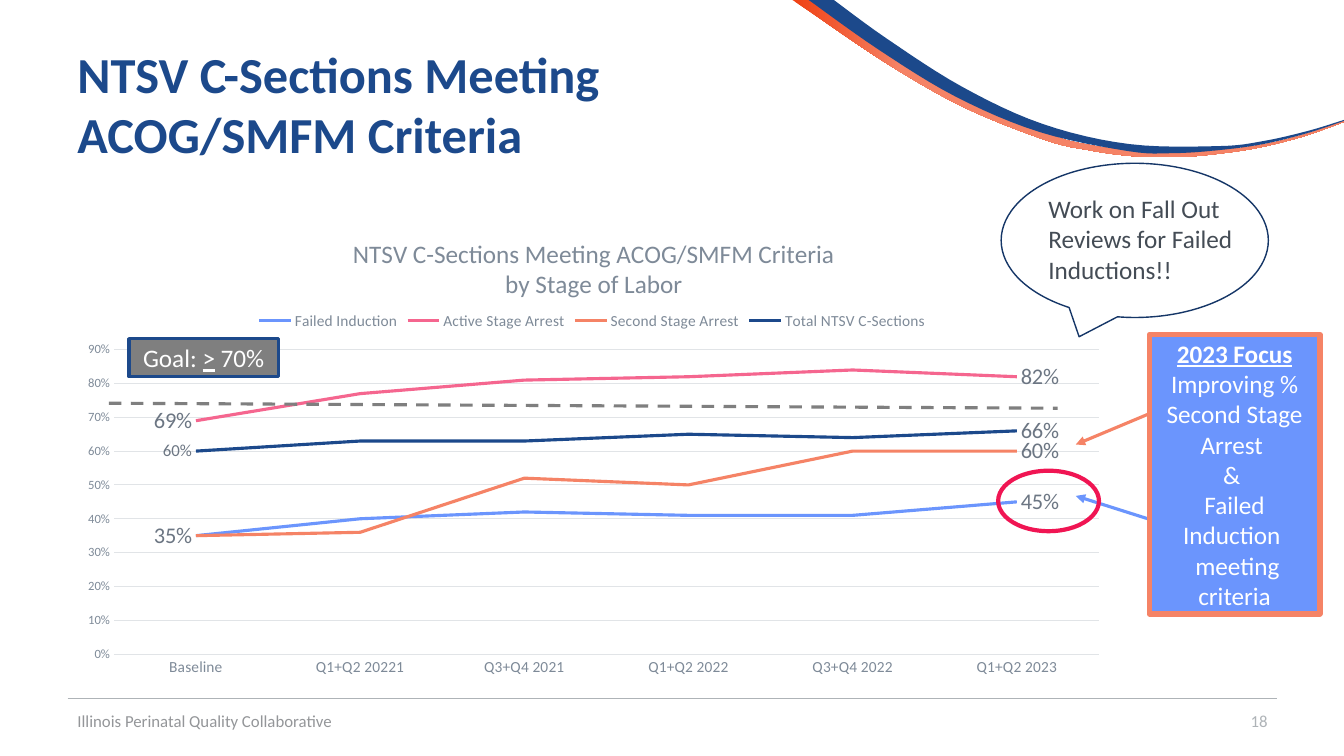
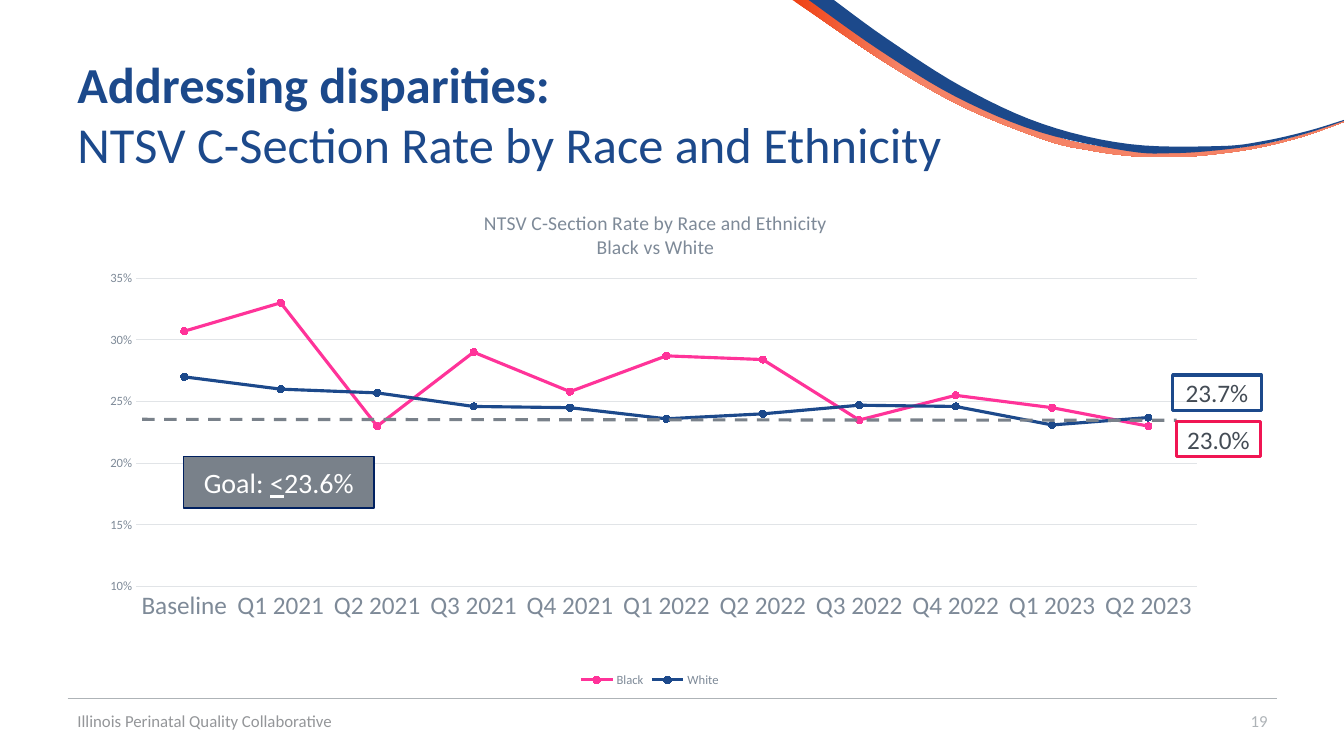
from lxml import etree
from pptx import Presentation
from pptx.chart.data import CategoryChartData
from pptx.dml.color import RGBColor
from pptx.enum.chart import XL_CHART_TYPE, XL_LABEL_POSITION, XL_LEGEND_POSITION, XL_MARKER_STYLE, XL_TICK_MARK
from pptx.enum.dml import MSO_LINE
from pptx.enum.shapes import MSO_CONNECTOR, MSO_SHAPE
from pptx.enum.text import MSO_ANCHOR, PP_ALIGN
from pptx.oxml.ns import qn
from pptx.util import Inches, Pt

FONT = "Calibri"
COLORS = {
    "navy": "1C498B", "deep_navy": "153667", "dark_navy": "002060", "red_orange": "EF4114",
    "coral": "F58366", "blue": "6B95FD", "pink": "F5668F", "hot_pink": "FF3399",
    "crimson": "F01553", "text": "444C55", "chart_text": "7E8A98", "label": "6C7683",
    "grid": "E1E4E7", "rule": "AEB3B7", "footer": "949699", "gray": "7F7F7F",
    "slate": "79818A", "white": "FFFFFF",
}
FOOTER = "Illinois Perinatal Quality Collaborative"

CORAL_TOP = [(7.86, 0), (8.05, 0), (8.82, 0.54), (9.58, 0.99), (10.39, 1.33), (10.81, 1.44),
             (11.25, 1.5), (11.68, 1.52), (12.12, 1.49), (12.56, 1.43), (12.99, 1.32), (13.33, 1.2)]
CORAL_BOTTOM = [(13.33, 1.21), (12.94, 1.35), (12.51, 1.46), (12.13, 1.52), (11.69, 1.56), (11.24, 1.55),
                (10.8, 1.49), (10.37, 1.39), (9.55, 1.06), (8.78, 0.62), (8.04, 0.12), (7.86, 0)]
NAVY_TOP = [(8.27, 0), (8.79, 0.38), (9.54, 0.86), (10.34, 1.23), (11.2, 1.43), (12.09, 1.45),
            (12.53, 1.4), (12.97, 1.3), (13.33, 1.19)]
NAVY_BOTTOM = [(13.33, 1.2), (12.97, 1.32), (12.53, 1.43), (12.09, 1.49), (11.64, 1.52), (11.19, 1.5),
               (10.31, 1.31), (9.48, 0.96), (8.71, 0.49), (8.02, 0)]

STAGE_CHART = {
    "box": (0.67, 2.12, 10.44, 4.69), "type": XL_CHART_TYPE.LINE,
    "title": ["NTSV C-Sections Meeting ACOG/SMFM Criteria", "by Stage of Labor"],
    "title_size": 18, "title_at": (3.47, 2.32),
    "plot": (1.13, 3.47, 9.77, 3.02), "scale": (0, 0.9, 0.1), "category_size": 11,
    "legend": XL_LEGEND_POSITION.TOP, "legend_size": 11, "legend_at": (2.52, 3.05),
    "categories": ["Baseline", "Q1+Q2 20221", "Q3+Q4 2021", "Q1+Q2 2022", "Q3+Q4 2022", "Q1+Q2 2023"],
    "series": [
        ("Failed Induction", "blue", [0.35, 0.4, 0.42, 0.41, 0.41, 0.45], {5: 16}),
        ("Active Stage Arrest", "pink", [0.69, 0.77, 0.81, 0.82, 0.84, 0.82], {0: 16, 5: 16}),
        ("Second Stage Arrest", "coral", [0.35, 0.36, 0.52, 0.5, 0.6, 0.6], {0: 16, 5: 16}),
        ("Total NTSV C-Sections", "navy", [0.6, 0.63, 0.63, 0.65, 0.64, 0.66], {0: 12, 5: 16}),
    ],
}
RACE_CHART = {
    "box": (0.87, 1.85, 11.21, 5.02), "type": XL_CHART_TYPE.LINE_MARKERS,
    "title": ["NTSV C-Section Rate by Race and Ethnicity", "Black vs White"],
    "title_size": 14, "title_at": (4.77, 2.05),
    "plot": (1.35, 2.76, 10.52, 3.06), "scale": (0.1, 0.35, 0.05), "category_size": 18,
    "legend": XL_LEGEND_POSITION.BOTTOM, "legend_size": 9, "legend_at": (5.72, 6.65),
    "categories": ["Baseline"] + [f"Q{quarter} {year}" for year, last in ((2021, 4), (2022, 4), (2023, 2))
                                  for quarter in range(1, last + 1)],
    "series": [
        ("Black", "hot_pink", [0.307, 0.33, 0.23, 0.29, 0.258, 0.287, 0.284, 0.235, 0.255, 0.245, 0.23], {}),
        ("White", "navy", [0.27, 0.26, 0.257, 0.246, 0.245, 0.236, 0.24, 0.247, 0.246, 0.231, 0.237], {}),
    ],
}
STAGE_TITLE = [[("NTSV C-Sections Meeting", "b")], [("ACOG/SMFM Criteria", "b")]]
RACE_TITLE = [[("Addressing disparities:", "b")], [("NTSV C-Section Rate by Race and Ethnicity", "")]]
STAGE_GOAL = [[("Goal: ", ""), (">", "u"), (" 70%", "")]]
RACE_GOAL = [[("Goal: ", ""), ("<", "u"), ("23.6%", "")]]
FOCUS = [
    [("2023 Focus ", "bu"), ("Improving % Second Stage Arrest ", "")],
    [("& ", "")],
    [("Failed Induction ", "")],
    [(" meeting criteria", "")],
]
CALLOUT = [[("Work on Fall Out Reviews for Failed Inductions!!", "")]]
ARROWS = [("blue", (11.49, 5.18), (10.67, 4.92)), ("coral", (11.41, 4.1), (10.67, 4.41))]
RATES = [("23.0%", "crimson", (11.67, 4.18, 0.83, 0.35)), ("23.7%", "navy", (11.63, 3.72, 0.88, 0.35))]


def rgb(name):
    return RGBColor.from_string(COLORS[name])


def style_font(font, size, color):
    font.name = FONT
    font.size = Pt(size)
    font.color.rgb = rgb(color)


def write(text_frame, paragraphs, size, color, align=PP_ALIGN.LEFT, anchor=MSO_ANCHOR.MIDDLE):
    text_frame.word_wrap = True
    text_frame.vertical_anchor = anchor
    for index, runs in enumerate(paragraphs):
        paragraph = text_frame.add_paragraph() if index else text_frame.paragraphs[0]
        paragraph.alignment = align
        for text, marks in runs:
            run = paragraph.add_run()
            run.text = text
            style_font(run.font, size, color)
            run.font.bold = "b" in marks
            run.font.underline = "u" in marks


def add_text(slide, box, paragraphs, size, color, **options):
    textbox = slide.shapes.add_textbox(*map(Inches, box))
    write(textbox.text_frame, paragraphs, size, color, **options)


def add_box(slide, preset, box, fill, line, width):
    shape = slide.shapes.add_shape(preset, *map(Inches, box))
    shape.shadow.inherit = False
    if fill:
        shape.fill.solid()
        shape.fill.fore_color.rgb = rgb(fill)
    else:
        shape.fill.background()
    shape.line.color.rgb = rgb(line)
    shape.line.width = Pt(width)
    return shape


def add_line(slide, start, end, color, width, dashed=False, arrow=False):
    connector = slide.shapes.add_connector(MSO_CONNECTOR.STRAIGHT, *map(Inches, start + end))
    connector.line.color.rgb = rgb(color)
    connector.line.width = Pt(width)
    if dashed:
        connector.line.dash_style = MSO_LINE.DASH
    properties = connector._element.spPr
    if arrow:
        etree.SubElement(properties.find(qn("a:ln")), qn("a:tailEnd"), type="triangle")
    etree.SubElement(properties, qn("a:effectLst"))


def smooth_edge(points, steps=6):
    padded = [points[0]] + points + [points[-1]]
    curve = [points[0]]
    for before, start, end, after in zip(padded, padded[1:], padded[2:], padded[3:]):
        for step in range(1, steps + 1):
            t = step / steps
            curve.append(tuple(
                0.5 * (2 * b + (c - a) * t + (2 * a - 5 * b + 4 * c - d) * t ** 2
                       + (3 * b - a - 3 * c + d) * t ** 3)
                for a, b, c, d in zip(before, start, end, after)))
    return curve


def add_ribbon(slide, top, bottom):
    outline = [(Inches(x), Inches(max(y, 0))) for x, y in smooth_edge(top) + smooth_edge(bottom)]
    builder = slide.shapes.build_freeform(*outline[0])
    builder.add_line_segments(outline[1:], close=True)
    ribbon = builder.convert_to_shape()
    ribbon.shadow.inherit = False
    ribbon.line.fill.background()
    return ribbon


def add_frame(presentation, number):
    slide = presentation.slides.add_slide(presentation.slide_layouts[6])
    coral = add_ribbon(slide, CORAL_TOP, CORAL_BOTTOM)
    coral.fill.gradient()
    coral.fill.gradient_angle = 0
    for stop, color, position in zip(coral.fill.gradient_stops, ("red_orange", "coral"), (0, 0.2)):
        stop.color.rgb = rgb(color)
        stop.position = position
    navy = add_ribbon(slide, NAVY_TOP, NAVY_BOTTOM)
    navy.fill.solid()
    navy.fill.fore_color.rgb = rgb("navy")
    add_line(slide, (0.67, 6.93), (12.67, 6.93), "rule", 0.75)
    add_text(slide, (9.67, 6.95, 3, 0.4), [[(str(number), "")]], 12, "rule", align=PP_ALIGN.RIGHT)
    add_text(slide, (0.67, 6.95, 4.5, 0.4), [[(FOOTER, "")]], 12, "footer")
    return slide


def add_title(slide, top, paragraphs):
    add_text(slide, (0.67, top, 12, 1.45), paragraphs, 36, "navy")


def place(element, index, box, chart_box, inner=False):
    for existing in element.findall(qn("c:layout")):
        element.remove(existing)
    layout = etree.Element(qn("c:layout"))
    manual = etree.SubElement(layout, qn("c:manualLayout"))
    left, top, width, height = chart_box
    settings = [("layoutTarget", "inner")] if inner else []
    settings += [("xMode", "edge"), ("yMode", "edge"),
                 ("x", (box[0] - left) / width), ("y", (box[1] - top) / height)]
    if inner:
        settings += [("w", box[2] / width), ("h", box[3] / height)]
    for name, value in settings:
        etree.SubElement(manual, qn("c:" + name), val=str(value))
    element.insert(index, layout)


def style_axes(chart, content):
    category, value = chart.category_axis, chart.value_axis
    for axis, size in ((category, content["category_size"]), (value, 9)):
        axis.major_tick_mark = axis.minor_tick_mark = XL_TICK_MARK.NONE
        style_font(axis.tick_labels.font, size, "chart_text")
    category.format.line.color.rgb = rgb("grid")
    category.format.line.width = Pt(0.75)
    category._element.find(qn("c:txPr")).find(qn("a:bodyPr")).set("rot", "0")
    value.format.line.fill.background()
    value.minimum_scale, value.maximum_scale, value.major_unit = content["scale"]
    value.major_gridlines.format.line.color.rgb = rgb("grid")
    value.major_gridlines.format.line.width = Pt(0.75)
    value.tick_labels.number_format = "0%"
    value.tick_labels.number_format_is_linked = False


def style_series(series, color, labels, has_markers):
    series.smooth = False
    series.format.line.color.rgb = rgb(color)
    series.format.line.width = Pt(2.25)
    if has_markers:
        series.marker.style = XL_MARKER_STYLE.CIRCLE
        series.marker.size = 5
        series.marker.format.fill.solid()
        series.marker.format.fill.fore_color.rgb = rgb(color)
        series.marker.format.line.color.rgb = rgb(color)
    for index, size in labels.items():
        label = series.points[index].data_label
        style_font(label.font, size, "label")
        label.position = XL_LABEL_POSITION.RIGHT if index else XL_LABEL_POSITION.LEFT


def add_line_chart(slide, content):
    data = CategoryChartData(number_format="0%")
    data.categories = content["categories"]
    for name, color, values, labels in content["series"]:
        data.add_series(name, values)
    box = content["box"]
    chart = slide.shapes.add_chart(content["type"], *map(Inches, box), data).chart
    style_font(chart.font, 10, "text")
    chart.plots[0].vary_by_categories = False
    chart.has_title = True
    write(chart.chart_title.text_frame, [[(line, "")] for line in content["title"]],
          content["title_size"], "chart_text", align=PP_ALIGN.CENTER)
    chart.chart_title.include_in_layout = False
    chart.has_legend = True
    chart.legend.position = content["legend"]
    chart.legend.include_in_layout = False
    style_font(chart.legend.font, content["legend_size"], "chart_text")
    style_axes(chart, content)
    has_markers = content["type"] == XL_CHART_TYPE.LINE_MARKERS
    for series, (name, color, values, labels) in zip(chart.plots[0].series, content["series"]):
        style_series(series, color, labels, has_markers)
    place(chart._chartSpace.chart.plotArea, 0, content["plot"], box, inner=True)
    place(chart.chart_title._element, 1, content["title_at"], box)
    place(chart.legend._element, 1, content["legend_at"], box)


def build_stage_slide(presentation):
    slide = add_frame(presentation, 18)
    add_line_chart(slide, STAGE_CHART)
    add_title(slide, 0.3, STAGE_TITLE)
    add_line(slide, (1.08, 4), (10.49, 4.05), "gray", 2.25, dashed=True)
    goal = add_box(slide, MSO_SHAPE.RECTANGLE, (1.28, 3.36, 1.48, 0.38), "gray", "navy", 2.25)
    write(goal.text_frame, STAGE_GOAL, 18, "white", align=PP_ALIGN.CENTER)
    for color, start, end in ARROWS:
        add_line(slide, start, end, color, 2.25, arrow=True)
    focus = add_box(slide, MSO_SHAPE.RECTANGLE, (11.4, 3.32, 1.69, 2.77), "blue", "coral", 4)
    write(focus.text_frame, FOCUS, 18, "white", align=PP_ALIGN.CENTER)
    add_box(slide, MSO_SHAPE.OVAL, (9.9, 4.67, 1, 0.6), None, "crimson", 3)
    add_box(slide, MSO_SHAPE.OVAL_CALLOUT, (9.93, 1.62, 2.65, 1.53), None, "deep_navy", 1)
    add_text(slide, (10.3, 1.87, 2.18, 1.01), CALLOUT, 18, "text", anchor=MSO_ANCHOR.TOP)


def build_race_slide(presentation):
    slide = add_frame(presentation, 19)
    add_line_chart(slide, RACE_CHART)
    add_title(slide, 0.4, RACE_TITLE)
    add_line(slide, (1.41, 4.16), (11.67, 4.17), "slate", 2.25, dashed=True)
    goal = add_box(slide, MSO_SHAPE.RECTANGLE, (1.82, 4.53, 1.89, 0.51), "slate", "dark_navy", 1)
    write(goal.text_frame, RACE_GOAL, 20, "white", align=PP_ALIGN.CENTER)
    for text, color, box in RATES:
        rate = add_box(slide, MSO_SHAPE.RECTANGLE, box, None, color, 2.25)
        write(rate.text_frame, [[(text, "")]], 18, "text", align=PP_ALIGN.CENTER)


def main():
    presentation = Presentation()
    presentation.slide_width = Inches(13.33)
    presentation.slide_height = Inches(7.5)
    build_stage_slide(presentation)
    build_race_slide(presentation)
    presentation.save("out.pptx")


if __name__ == "__main__":
    main()
